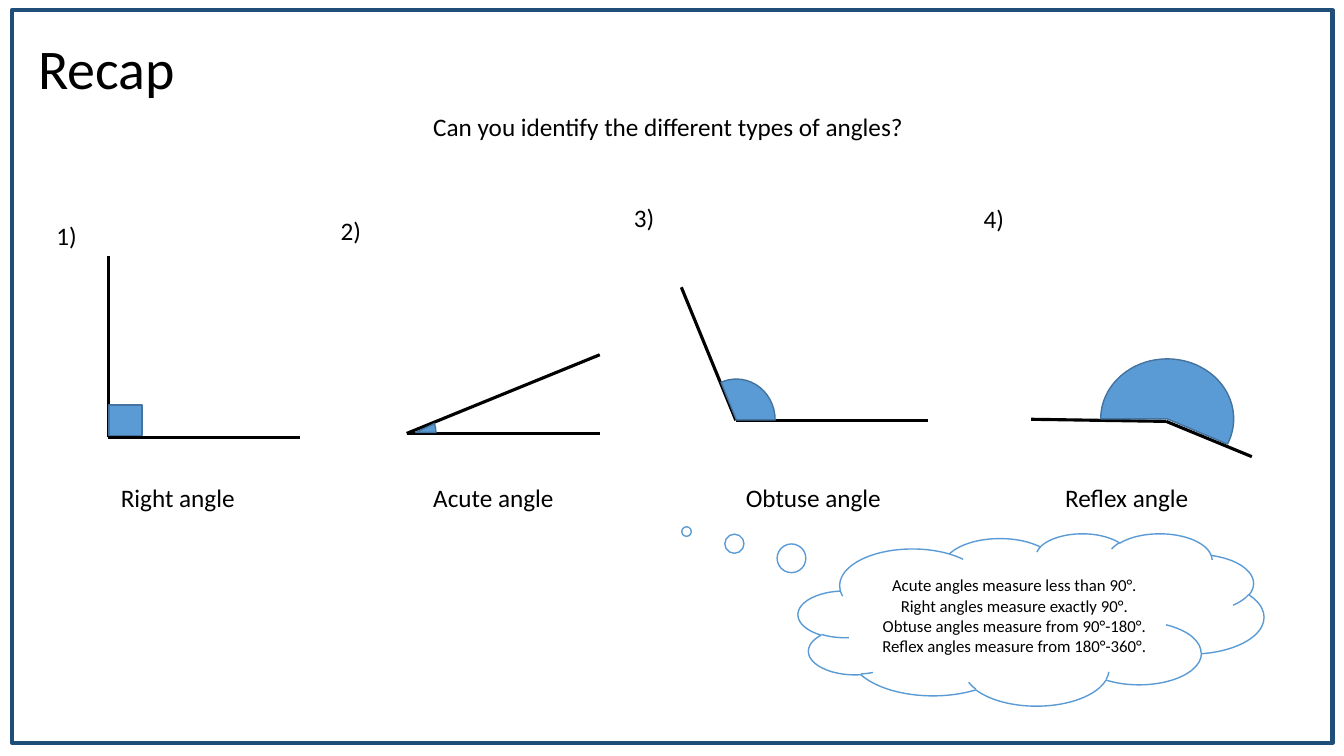
"""Builds a recap slide on naming the four types of angles."""
from dataclasses import dataclass

from lxml import etree
from pptx import Presentation
from pptx import util as u
from pptx.dml.color import RGBColor
from pptx.enum import shapes, text
from pptx.oxml.ns import qn


@dataclass(frozen=True)
class Theme:
    font: str = "Calibri"
    ink: str = "000000"
    frame: str = "1F4E79"
    accent: str = "5B9BD5"
    edge: str = "43739E"
    title: int = 40
    body: int = 18
    note: int = 12


class Deck:
    def __init__(self, s, theme):
        self.s, self.theme = s, theme

    def set_text(self, tf, lines, size, align=text.PP_ALIGN.LEFT):
        tf.text = "\n".join(lines)
        for p in tf.paragraphs:
            p.alignment = align
            p.font.name = self.theme.font
            p.font.size = u.Pt(size)
            p.font.color.rgb = RGBColor.from_string(self.theme.ink)

    def title(self, label, x, y, w, h):
        sp = self.s.shapes.title
        sp.left, sp.top, sp.width, sp.height = map(u.Pt, (x, y, w, h))
        tf = sp.text_frame
        tf.word_wrap = False
        tf.auto_size = text.MSO_AUTO_SIZE.SHAPE_TO_FIT_TEXT
        tf.vertical_anchor = text.MSO_ANCHOR.TOP
        self.set_text(tf, [label], self.theme.title)
        tf.paragraphs[0].line_spacing = 1.0

    def label(self, words, x, y, w, parent=None):
        sp = (parent or self.s).shapes.add_textbox(*map(u.Pt, (x, y, w, 29)))
        tf = sp.text_frame
        tf.word_wrap = False
        tf.auto_size = text.MSO_AUTO_SIZE.SHAPE_TO_FIT_TEXT
        self.set_text(tf, [words], self.theme.body)

    def shape(self, kind, box, line, width=1, fill=None, adj=(), rot=0, parent=None):
        sp = (parent or self.s).shapes.add_shape(kind, *map(u.Pt, box))
        sp.shadow.inherit = False
        sp.rotation = rot
        for i, value in enumerate(adj):
            sp.adjustments[i] = value
        if fill:
            sp.fill.solid()
            sp.fill.fore_color.rgb = RGBColor.from_string(fill)
        else:
            sp.fill.background()
        sp.line.color.rgb = RGBColor.from_string(line)
        sp.line.width = u.Pt(width)
        return sp

    def ray(self, start, end, parent):
        c = parent.shapes.add_connector(
            shapes.MSO_CONNECTOR.STRAIGHT, *map(u.Pt, (*start, *end)))
        c.line.color.rgb = RGBColor.from_string(self.theme.ink)
        c.line.width = u.Pt(2.25)
        etree.SubElement(c._element.spPr, qn("a:effectLst"))

    def angle(self, number, at, vertex, ends, kind, box, adj=(), rot=0):
        grp = self.s.shapes.add_group_shape()
        self.label(f"{number})", *at, 29.5, grp)
        for end in ends:
            self.ray(vertex, end, grp)
        self.shape(kind, box, self.theme.edge, fill=self.theme.accent,
                   adj=adj, rot=rot, parent=grp)

    def thought(self, lines, box, adj):
        sp = self.shape(shapes.MSO_SHAPE.CLOUD_CALLOUT, box, self.theme.accent, adj=adj)
        sp.text_frame.vertical_anchor = text.MSO_ANCHOR.MIDDLE
        self.set_text(sp.text_frame, lines, self.theme.note, text.PP_ALIGN.CENTER)


SQUARE, PIE = shapes.MSO_SHAPE.RECTANGLE, shapes.MSO_SHAPE.PIE
ANGLES = [
    ((33.1, 154.1), (77.5, 312.5), [(214.6, 312.5), (77.5, 182.9)],
     SQUARE, (77.8, 289.4, 23.8, 21.9)),
    ((236.2, 150.5), (290.5, 309.6), [(428.4, 309.6), (428.4, 253.4)],
     PIE, (280.1, 294.5, 33.8, 28.8), (146.96, 162), 90),
    ((445.7, 141.1), (525.6, 300.2), [(663.1, 300.2), (486.7, 205.2)],
     PIE, (496.8, 272.2, 58.3, 55.4), (94.69, 162), 90),
    ((695.5, 141.8), (833, 301), [(736.6, 299.5), (894.2, 326.2)],
     PIE, (786.2, 256.3, 95, 85.7), (0, 121.64), 180),
]
NAMES = [("Right angle", 79.2, 100.8), ("Acute angle", 302.4, 105.8),
         ("Obtuse angle", 525.6, 116.6), ("Reflex angle", 753.8, 108)]
FACTS = ["Acute angles measure less than 90°.",
         "Right angles measure exactly 90°.",
         "Obtuse angles measure from 90°-180°.",
         "Reflex angles measure from 180°-360°."]


def main():
    prs = Presentation()
    prs.slide_width, prs.slide_height = u.Pt(960), u.Pt(540)
    deck = Deck(prs.slides.add_slide(prs.slide_layouts[5]), Theme())
    deck.shape(SQUARE, (8.6, 7.2, 943.2, 523.5), deck.theme.frame, 3)
    deck.title("Recap", 20.2, 20.2, 113, 55.7)
    deck.label("Can you identify the different types of angles?", 302.4, 75.6, 355)
    for number, angle in enumerate(ANGLES, 1):
        deck.angle(number, *angle)
    for name, x, w in NAMES:
        deck.label(name, x, 341.3, w)
    deck.thought(FACTS, (570.2, 380.9, 332.6, 123.1), (-0.74, -0.51))
    prs.save("out.pptx")


if __name__ == "__main__":
    main()
